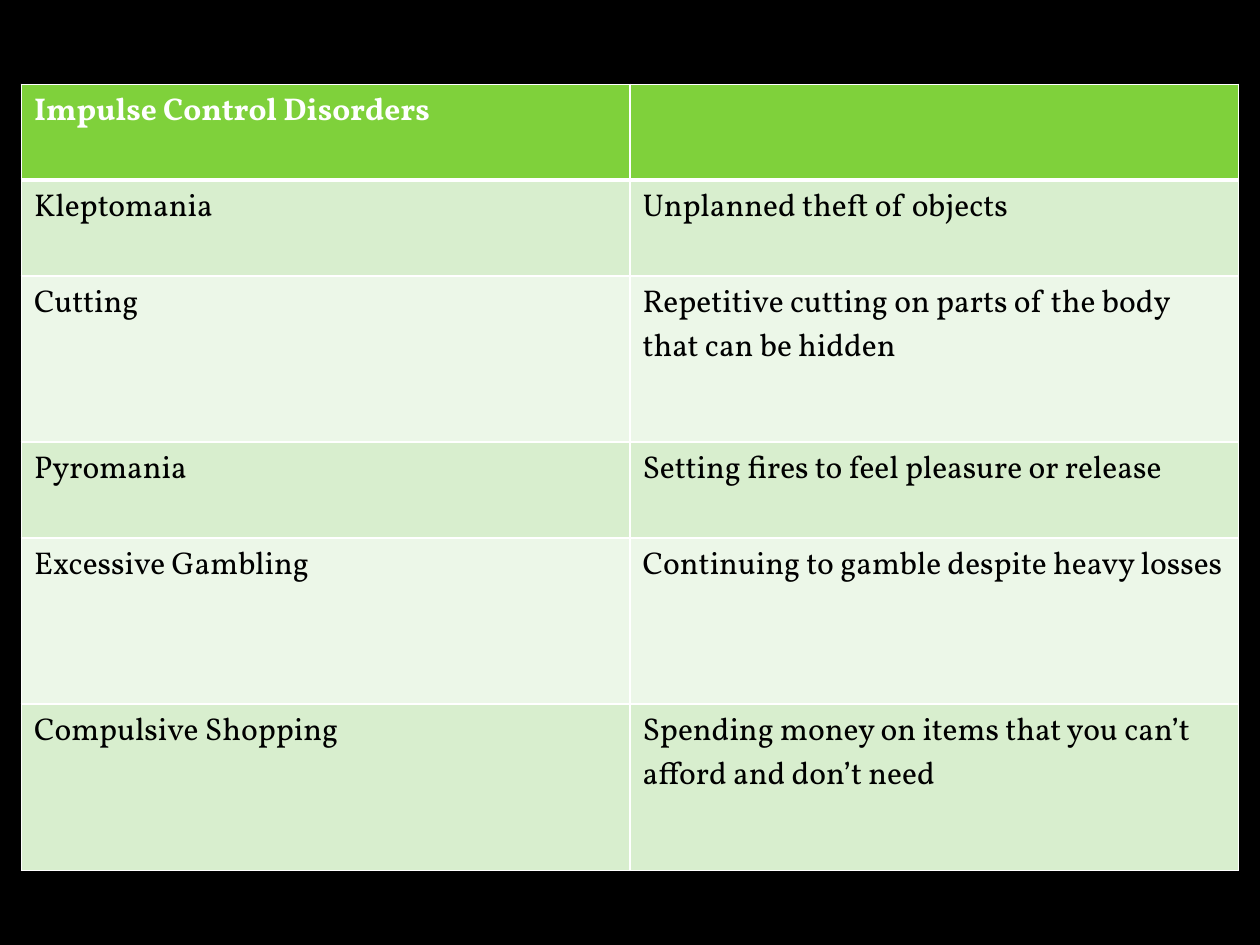
from dataclasses import dataclass

from lxml import etree
from pptx import Presentation
from pptx import util as u
from pptx.dml import color
from pptx.oxml import ns

COLORS = {
    "background": "000000",
    "header": "7FD13B",
    "band_dark": "D8EECE",
    "band_light": "ECF7E8",
    "border": "FFFFFF",
    "header_text": "FFFFFF",
    "body_text": "000000",
}
TEXT_FORMAT = {"name": "Vollkorn", "size": u.Pt(18)}
THIN, THICK = 1, 3
SHORT, TALL = 0.76, 1.32
COLUMN_WIDTH = 4.83


@dataclass(frozen=True)
class Disorder:
    name: str
    description: str
    height: float


@dataclass(frozen=True)
class RowStyle:
    fill: str
    text: str
    bold: bool
    top: int = THIN
    bottom: int = THIN


HEADING = Disorder("Impulse Control Disorders", "", SHORT)
DISORDERS = [
    Disorder("Kleptomania", "Unplanned theft of objects", SHORT),
    Disorder("Cutting", "Repetitive cutting on parts of the body that can be hidden", TALL),
    Disorder("Pyromania", "Setting fires to feel pleasure or release", SHORT),
    Disorder("Excessive Gambling", "Continuing to gamble despite heavy losses", TALL),
    Disorder("Compulsive Shopping", "Spending money on items that you can’t afford and don’t need", TALL),
]


def rgb(key: str) -> color.RGBColor:
    return color.RGBColor.from_string(COLORS[key])


def row_style(index: int) -> RowStyle:
    if index == 0:
        return RowStyle("header", "header_text", True, bottom=THICK)
    band = "band_dark" if index % 2 else "band_light"
    return RowStyle(band, "body_text", False, top=THICK if index == 1 else THIN)


def draw_borders(cell, style: RowStyle) -> None:
    properties = cell._tc.get_or_add_tcPr()
    widths = {"lnL": THIN, "lnR": THIN, "lnT": style.top, "lnB": style.bottom}
    for side, width in widths.items():
        edge = etree.SubElement(properties, ns.qn(f"a:{side}"), w=str(u.Pt(width)))
        paint = etree.SubElement(edge, ns.qn("a:solidFill"))
        etree.SubElement(paint, ns.qn("a:srgbClr"), val=COLORS["border"])


def draw_cell(cell, wording: str, style: RowStyle) -> None:
    draw_borders(cell, style)
    cell.fill.solid()
    cell.fill.fore_color.rgb = rgb(style.fill)
    cell.text = wording
    font = cell.text_frame.paragraphs[0].font
    if wording:
        font = cell.text_frame.paragraphs[0].runs[0].font
    for attribute, value in {**TEXT_FORMAT, "bold": style.bold}.items():
        setattr(font, attribute, value)
    font.color.rgb = rgb(style.text)


def draw_table(slide, entries: list[Disorder]) -> None:
    table = slide.shapes.add_table(
        len(entries), 2, u.Inches(0.17), u.Inches(0.67),
        u.Inches(2 * COLUMN_WIDTH), u.Inches(sum(entry.height for entry in entries)),
    ).table
    for column in table.columns:
        column.width = u.Inches(COLUMN_WIDTH)
    for index, entry in enumerate(entries):
        table.rows[index].height = u.Inches(entry.height)
        for position, wording in enumerate((entry.name, entry.description)):
            draw_cell(table.cell(index, position), wording, row_style(index))


def main() -> None:
    deck = Presentation()
    deck.slide_width, deck.slide_height = u.Inches(10), u.Inches(7.5)
    slide = deck.slides.add_slide(deck.slide_layouts[6])
    slide.background.fill.solid()
    slide.background.fill.fore_color.rgb = rgb("background")
    draw_table(slide, [HEADING, *DISORDERS])
    deck.save("out.pptx")


if __name__ == "__main__":
    main()
